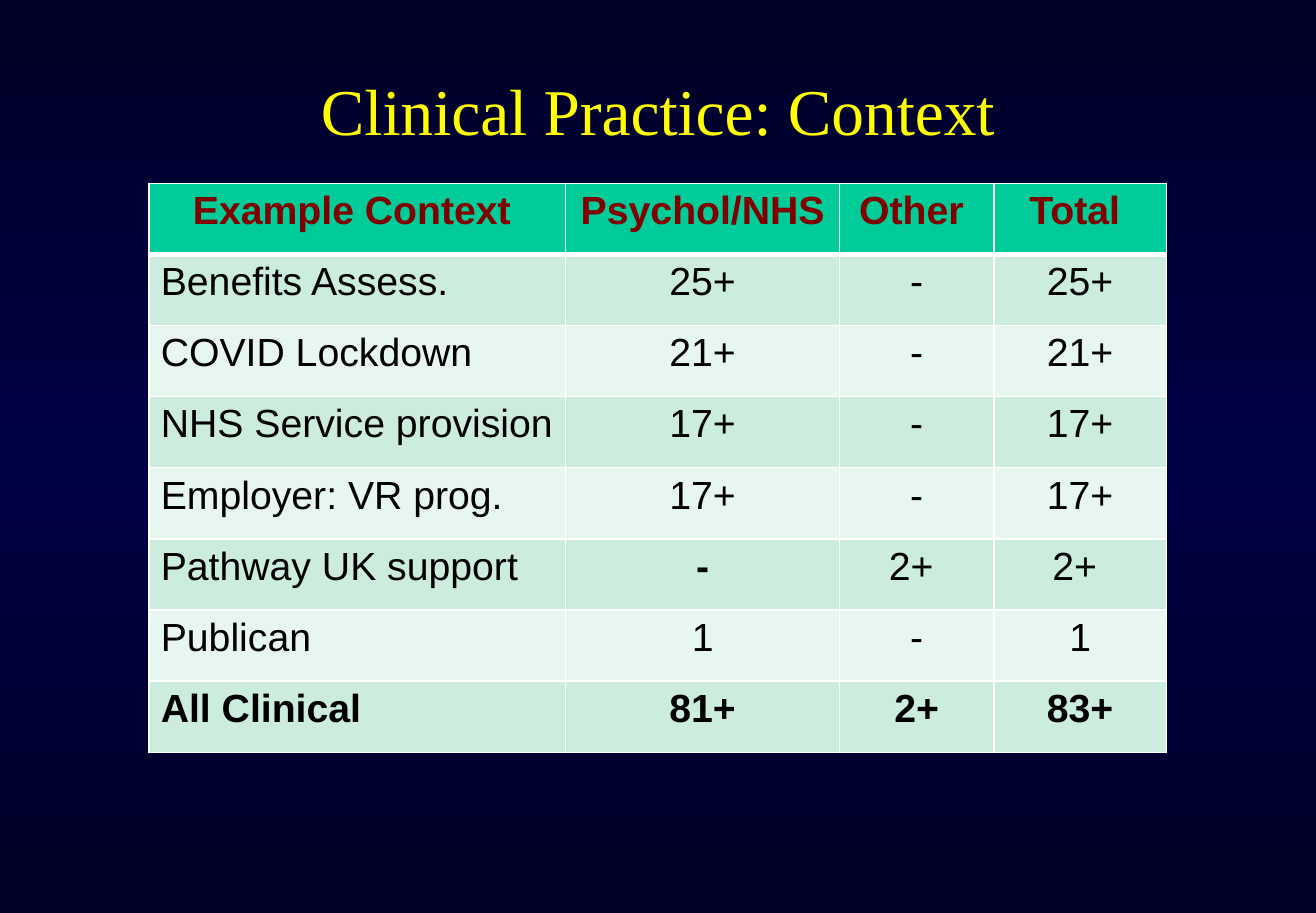
"""Build the slide on clinical practice contexts."""
from copy import deepcopy
from dataclasses import dataclass

from lxml import etree
from pptx import Presentation
from pptx.dml.color import RGBColor
from pptx.enum.text import MSO_ANCHOR, PP_ALIGN
from pptx.oxml.ns import qn
from pptx.slide import Slide
from pptx.table import Table, _Cell
from pptx.text.text import TextFrame
from pptx.util import Cm, Pt

LEFT, CENTER = PP_ALIGN.LEFT, PP_ALIGN.CENTER
TOP, MIDDLE = MSO_ANCHOR.TOP, MSO_ANCHOR.MIDDLE


@dataclass(frozen=True)
class Theme:
    """Colours, fonts and type sizes."""
    edge: str = "000027"
    core: str = "000044"
    title: str = "FFFF00"
    head: str = "800000"
    ink: str = "000000"
    rule: str = "FFFFFF"
    band: str = "00CC99"
    dark: str = "CCECDE"
    light: str = "E7F6EF"
    serif: str = "Times New Roman"
    sans: str = "Arial"
    large: int = 40
    body: int = 24
    thin: int = 1
    thick: int = 3


@dataclass(frozen=True)
class Row:
    """One table row and the columns set in bold."""
    texts: tuple[str, ...]
    bold: tuple[int, ...] = ()


THEME = Theme()
ALL = (0, 1, 2, 3)
WIDTHS = (9, 5.92, 3.33, 3.73)
TALL = 12.3
ROWS = (
    Row(("Example Context ", "Psychol/NHS ", "Other ", "Total "), ALL),
    Row(("Benefits Assess.", "25+", "-", "25+")),
    Row(("COVID Lockdown", "21+", "-", "21+")),
    Row(("NHS Service provision", "17+", "-", "17+")),
    Row(("Employer: VR prog.", "17+", "-", "17+")),
    Row(("Pathway UK support", "-", "2+ ", "2+ "), (1,)),
    Row(("Publican", "1", "-", "1")),
    Row(("All Clinical", "81+", "2+", "83+"), ALL),
)


def write(frame: TextFrame, text: str, *, font: str, size: int, color: str,
          bold: bool = False, align: PP_ALIGN = CENTER) -> None:
    """Put formatted text in a frame."""
    para = frame.paragraphs[0]
    para.alignment = align
    run = para.add_run()
    run.text = text
    run.font.name = font
    run.font.size = Pt(size)
    run.font.bold = bold
    run.font.color.rgb = RGBColor.from_string(color)


def paint(slide: Slide) -> None:
    """Fill the background with a vertical gradient."""
    fill = slide.background.fill
    fill.gradient()
    fill.gradient_angle = 90
    stops = next(slide.element.iter(qn("a:gsLst")))
    stops.append(deepcopy(stops[-1]))
    tones = (THEME.edge, THEME.core, THEME.edge)
    for num, (stop, tone) in enumerate(zip(fill.gradient_stops, tones)):
        stop.position = num / 2
        stop.color.rgb = RGBColor.from_string(tone)


def border(cell: _Cell, top: int, bottom: int) -> None:
    """Draw the four borders of a cell."""
    props = cell._tc.get_or_add_tcPr()
    sides = {"L": THEME.thin, "R": THEME.thin, "T": top, "B": bottom}
    for side, width in sides.items():
        line = etree.SubElement(props, qn(f"a:ln{side}"), w=str(Pt(width)))
        solid = etree.SubElement(line, qn("a:solidFill"))
        etree.SubElement(solid, qn("a:srgbClr"), val=THEME.rule)


def draw(table: Table, num: int, row: Row) -> None:
    """Fill one table row."""
    head = num == 0
    fill = THEME.band if head else THEME.dark if num % 2 else THEME.light
    top = THEME.thick if num == 1 else THEME.thin
    bottom = THEME.thick if head else THEME.thin
    table.rows[num].height = Cm(TALL / len(ROWS))
    for col, text in enumerate(row.texts):
        cell = table.cell(num, col)
        border(cell, top, bottom)
        cell.fill.solid()
        cell.fill.fore_color.rgb = RGBColor.from_string(fill)
        cell.vertical_anchor = TOP
        write(cell.text_frame, text, font=THEME.sans, size=THEME.body,
              color=THEME.head if head else THEME.ink, bold=col in row.bold,
              align=CENTER if head or col else LEFT)


def main() -> None:
    """Build and save the slide."""
    deck = Presentation()
    deck.slide_width, deck.slide_height = Cm(28.43), Cm(19.73)
    slide = deck.slides.add_slide(deck.slide_layouts[5])
    paint(slide)

    title = slide.shapes.title
    title.left, title.top = Cm(0.32), Cm(1.26)
    title.width, title.height = Cm(27.79), Cm(2.2)
    title.text_frame.vertical_anchor = MIDDLE
    write(title.text_frame, "Clinical Practice: Context", font=THEME.serif,
          size=THEME.large, color=THEME.title)

    table = slide.shapes.add_table(
        len(ROWS), len(WIDTHS), Cm(3.22), Cm(3.96),
        Cm(sum(WIDTHS)), Cm(TALL)).table
    for column, width in zip(table.columns, WIDTHS):
        column.width = Cm(width)
    for num, row in enumerate(ROWS):
        draw(table, num, row)
    deck.save("out.pptx")


if __name__ == "__main__":
    main()
